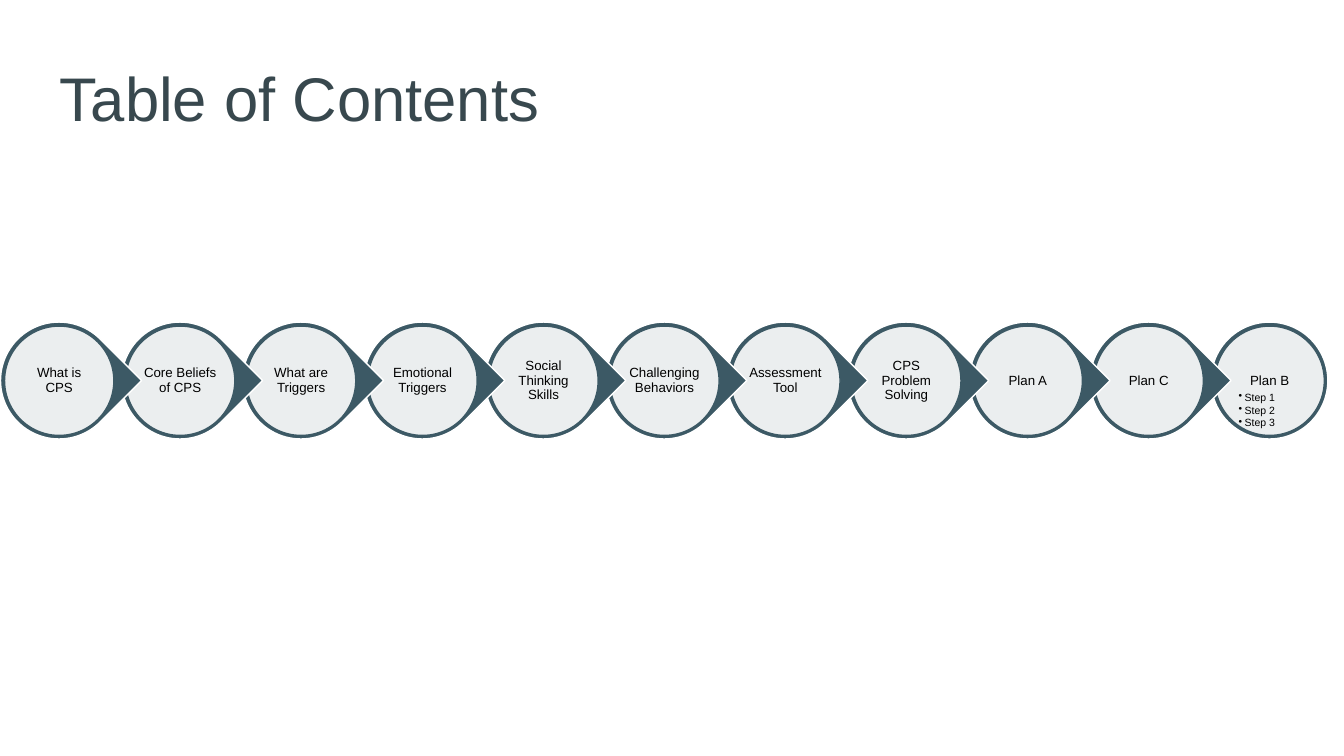
from lxml.etree import SubElement
from pptx import Presentation
from pptx.dml.color import RGBColor
from pptx.enum.shapes import MSO_SHAPE
from pptx.enum.text import MSO_ANCHOR, MSO_AUTO_SIZE, PP_ALIGN
from pptx.oxml.ns import qn
from pptx.util import Pt

EMU_PER_PX = 9144  # 100 px to the inch
WIDTH, HEIGHT = 2667, 1500
FONT = "Arial"
TEAL, WHITE, BLACK, SLATE = "3C5965", "FFFFFF", "000000", "38484E"

TOPICS = [
    "What is CPS", "Core Beliefs of CPS", "What are Triggers",
    "Emotional Triggers", "Social Thinking Skills", "Challenging Behaviors",
    "Assessment Tool", "CPS Problem Solving", "Plan A", "Plan C", "Plan B",
]
STEPS = ["Step 1", "Step 2", "Step 3"]

CHAIN_LEFT, CHAIN_TOP, PITCH = 1, 639, 240.2
RIM, DISC, LABEL = 232, 217, 155
DISC_INSET, LABEL_INSET = 8, 39


def px(length):
    return round(length * EMU_PER_PX)


def rgb(color):
    return RGBColor.from_string(color)


class SlideBuilder:
    def __init__(self, presentation):
        self.slide = presentation.slides.add_slide(presentation.slide_layouts[5])

    def style(self, paragraph, size, color=BLACK):
        paragraph.font.name = FONT
        paragraph.font.size = Pt(size)
        paragraph.font.color.rgb = rgb(color)

    def title(self, text, left, top, width, height):
        title = self.slide.shapes.title
        title.left, title.top = px(left), px(top)
        title.width, title.height = px(width), px(height)
        frame = title.text_frame
        frame.text = text
        frame.auto_size = MSO_AUTO_SIZE.NONE
        frame.vertical_anchor = MSO_ANCHOR.TOP
        frame.paragraphs[0].alignment = PP_ALIGN.LEFT
        self.style(frame.paragraphs[0], 88, SLATE)

    def shape(self, kind, left, top, size, fill, line, opacity=100):
        shape = self.slide.shapes.add_shape(kind, px(left), px(top), px(size), px(size))
        shape.shadow.inherit = False
        shape.fill.solid()
        shape.fill.fore_color.rgb = rgb(fill)
        shape.line.color.rgb = rgb(line)
        shape.line.width = Pt(2)
        if opacity < 100:
            color = shape.fill._xPr.find(qn("a:solidFill"))[0]
            SubElement(color, qn("a:alpha")).set("val", str(opacity * 1000))
        return shape

    def text(self, lines, left, top, width, height, size, inset):
        box = self.slide.shapes.add_textbox(px(left), px(top), px(width), px(height))
        frame = box.text_frame
        frame.word_wrap = True
        frame.margin_left = frame.margin_right = px(inset)
        frame.margin_top = frame.margin_bottom = px(inset)
        frame.text = "\n".join(lines)
        for paragraph in frame.paragraphs:
            paragraph.line_spacing = 0.9
            self.style(paragraph, size)
        return frame

    def label(self, text, left, top):
        frame = self.text([text], left, top, LABEL, LABEL, 19, 3)
        frame.vertical_anchor = MSO_ANCHOR.MIDDLE
        frame.paragraphs[0].alignment = PP_ALIGN.CENTER

    def bullets(self, lines, left, top, width, height):
        frame = self.text(lines, left, top, width, height, 15, 8)
        for index, paragraph in enumerate(frame.paragraphs):
            if index:
                paragraph.space_before = Pt(2.2)
            properties = paragraph._p.get_or_add_pPr()
            properties.set("marL", str(px(12)))
            properties.set("indent", str(px(-12)))
            SubElement(properties, qn("a:buChar")).set("char", "•")
            # The schema wants the bullet ahead of the default run properties.
            defaults = properties.find(qn("a:defRPr"))
            if defaults is not None:
                properties.append(defaults)

    def link(self, topic, left, is_last):
        """Draw one link of the chain; all but the last point to the right."""
        kind = MSO_SHAPE.OVAL if is_last else MSO_SHAPE.TEAR
        rim = self.shape(kind, left, CHAIN_TOP, RIM, TEAL, WHITE)
        if not is_last:
            rim.rotation = 45
        self.shape(MSO_SHAPE.OVAL, left + DISC_INSET, CHAIN_TOP + DISC_INSET,
                   DISC, WHITE, TEAL, opacity=90)
        self.label(topic, left + LABEL_INSET, CHAIN_TOP + LABEL_INSET)


def main():
    presentation = Presentation()
    presentation.slide_width, presentation.slide_height = px(WIDTH), px(HEIGHT)
    builder = SlideBuilder(presentation)
    builder.title("Table of Contents", 109, 113, 1164, 170)

    # From right to left, so that each point overlaps the next link.
    last = len(TOPICS) - 1
    for index in range(last, -1, -1):
        builder.link(TOPICS[index], CHAIN_LEFT + round(index * PITCH), index == last)
        if index == last:
            builder.bullets(STEPS, 2450, 770, 217, 127)
    presentation.save("out.pptx")


if __name__ == "__main__":
    main()
